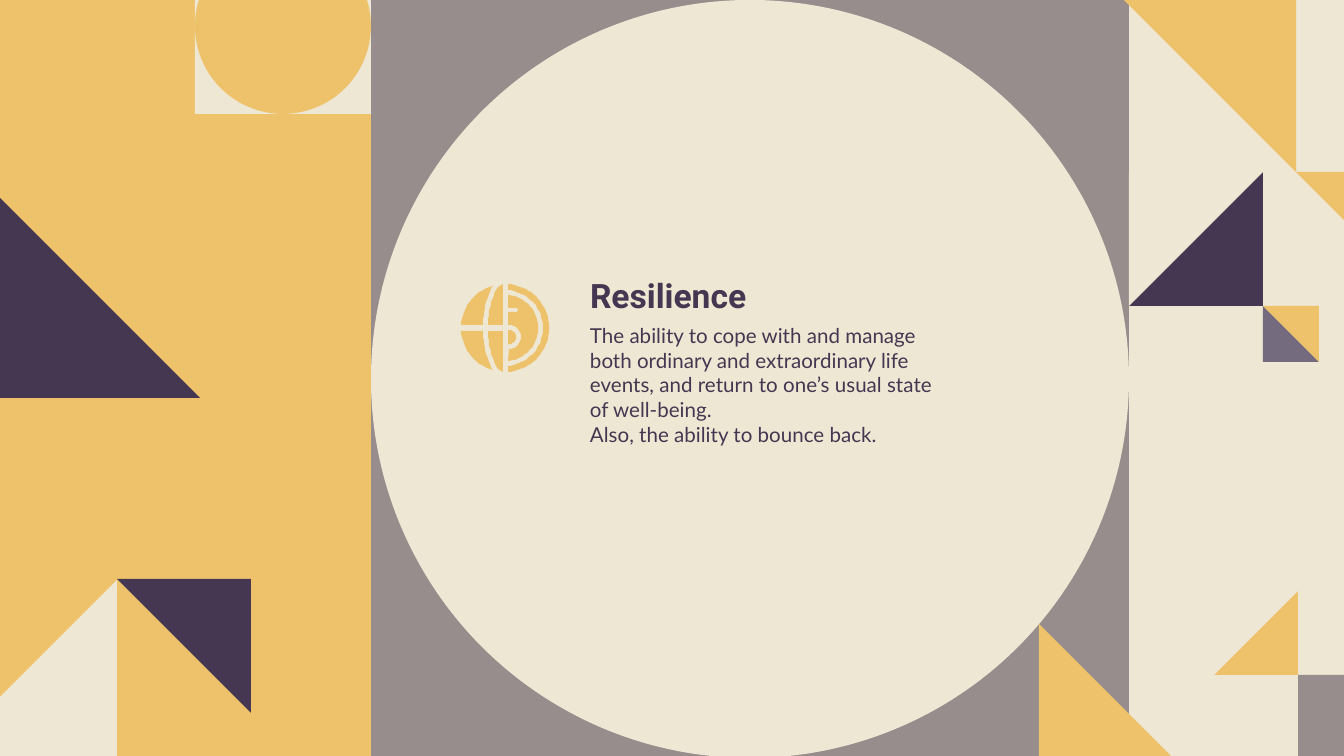
import math

import pptx
import pptx.dml.color
import pptx.enum.shapes
import pptx.enum.text
import pptx.util

EMU_PER_PX = 914400 / 134.4
AMBER, CREAM, GREY = "EDC26B", "EDE7D3", "968D8C"
PLUM, LILAC = "453751", "756B7E"
RECTANGLE = pptx.enum.shapes.MSO_SHAPE.RECTANGLE
OVAL = pptx.enum.shapes.MSO_SHAPE.OVAL


def px(length):
    return pptx.util.Emu(round(length * EMU_PER_PX))


def rgb(color):
    return pptx.dml.color.RGBColor.from_string(color)


def paint(shape, color):
    shape.shadow.inherit = False
    shape.fill.solid()
    shape.fill.fore_color.rgb = rgb(color)
    shape.line.fill.background()


def add_preset(slide, kind, left, top, width, height, color):
    paint(slide.shapes.add_shape(kind, px(left), px(top), px(width), px(height)), color)


def add_outline(shapes, points, color):
    builder = shapes.build_freeform(*points[0], scale=EMU_PER_PX)
    builder.add_line_segments(points[1:], close=True)
    paint(builder.convert_to_shape(), color)


def add_triangle(slide, left, top, size, corner, color):
    """Half a square, with its right angle at corner: tl, tr, br or bl."""
    right, bottom = left + size, top + size
    corners = {"tl": (left, top), "tr": (right, top), "br": (right, bottom), "bl": (left, bottom)}
    opposite = {"tl": "br", "tr": "bl", "br": "tl", "bl": "tr"}[corner]
    points = [point for name, point in corners.items() if name != opposite]
    add_outline(slide.shapes, points, color)


def add_disc_tile(slide, left, top, size, tile_color, disc_color):
    """A square with a circle that touches its four sides."""
    add_preset(slide, RECTANGLE, left, top, size, size, tile_color)
    add_preset(slide, OVAL, left, top, size, size, disc_color)


def arc(center_x, center_y, radius_x, radius_y, start, end):
    """Points along an ellipse; angles in degrees, clockwise from the right."""
    steps = max(8, round(abs(end - start) / 4))
    angles = [math.radians(start + (end - start) * step / steps) for step in range(steps + 1)]
    return [(center_x + radius_x * math.cos(angle), center_y + radius_y * math.sin(angle))
            for angle in angles]


def add_globe_coin_icon(slide, left, top, size):
    """Left half a globe, right half a coin."""
    middle = size / 2
    globe_side = arc(44, 44, 44, 44, 184, 254) + arc(44, 44, 22, 51, 237, 183)
    globe_core = arc(44, 44, 17, 44, 263, 184) + [(42, 41)]
    coin_rim = arc(44, 44, 44, 44, 274, 446) + arc(44, 44, 38, 38, 445, 275)
    coin_face = (arc(44, 44, 33, 33, 275, 445) + arc(48, 53, 12, 12, 90, -90)
                 + [(47, 41), (47, 28)] + arc(55, 26, 2, 2, 90, -90) + [(47, 24)])
    coin_bowl = [(47, 60)] + arc(48, 53, 7, 7, 90, -90) + [(47, 46)]

    outlines = [coin_rim, coin_face, coin_bowl]
    for quarter in (globe_side, globe_core):
        outlines += [quarter, [(x, 2 * middle - y) for x, y in quarter]]
    group = slide.shapes.add_group_shape()
    for outline in outlines:
        add_outline(group.shapes, [(left + x, top + y) for x, y in outline], AMBER)


def add_text(slide, left, top, width, height, text, font, size, bold, anchor):
    box = slide.shapes.add_textbox(px(left), px(top), px(width), px(height))
    frame = box.text_frame
    frame.word_wrap = True
    frame.vertical_anchor = anchor
    frame.margin_left = frame.margin_right = frame.margin_top = frame.margin_bottom = px(13)
    frame.text = text
    for paragraph in frame.paragraphs:
        for run in paragraph.runs:
            run.font.name = font
            run.font.size = pptx.util.Pt(size)
            run.font.bold = bold
            run.font.color.rgb = rgb(PLUM)


def add_pattern(slide):
    add_disc_tile(slide, 371, 0, 758, GREY, CREAM)
    add_preset(slide, RECTANGLE, -7, -4, 378, 761, AMBER)
    add_triangle(slide, 1124, 0, 172, "tr", AMBER)
    add_disc_tile(slide, 195, -62, 176, CREAM, AMBER)
    for triangle in [
        (1039, 624, 134, "bl", AMBER),
        (1263, 306, 56, "bl", LILAC),
        (1263, 306, 56, "tr", AMBER),
        (1296, 172, 71, "tr", AMBER),
        (1129, 172, 134, "br", PLUM),
        (1129, 172, 134, "tl", CREAM),
        (-202, -4, 402, "bl", PLUM),
        (117, 579, 134, "tr", PLUM),
        (-60, 580, 177, "br", CREAM),
        (1298, 675, 168, "tl", GREY),
        (1214, 591, 84, "br", AMBER),
        (1214, 591, 84, "tl", CREAM),
    ]:
        add_triangle(slide, *triangle)


def add_definition(slide, left, top):
    anchors = pptx.enum.text.MSO_ANCHOR
    add_text(slide, left, top + 284, 380, 262,
             "The ability to cope with and manage both ordinary and extraordinary life events, "
             "and return to one’s usual state of well-being.\n"
             "Also, the ability to bounce back.",
             "Lato", 11, False, anchors.TOP)
    add_text(slide, left, top, 477, 302, "Resilience", "Roboto", 18, True, anchors.BOTTOM)


def main():
    presentation = pptx.Presentation()
    presentation.slide_width, presentation.slide_height = px(1344), px(756)
    slide = presentation.slides.add_slide(presentation.slide_layouts[6])
    slide.background.fill.solid()
    slide.background.fill.fore_color.rgb = rgb(CREAM)
    add_pattern(slide)
    add_definition(slide, 577, 26)
    add_globe_coin_icon(slide, 461, 284, 88)
    presentation.save("out.pptx")


if __name__ == "__main__":
    main()
